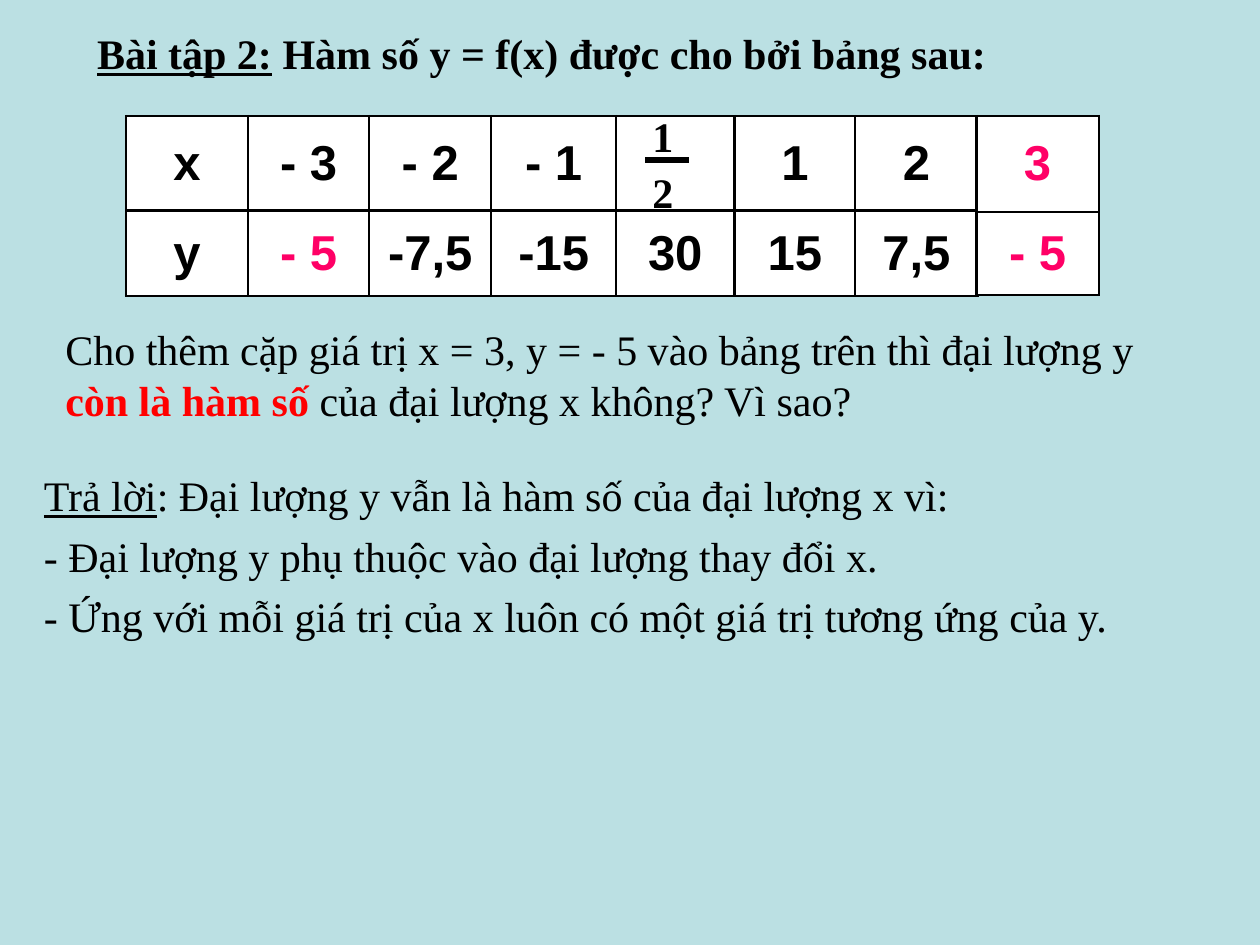
from dataclasses import dataclass

from lxml import etree
from pptx import Presentation
from pptx.dml.color import RGBColor as RGB
from pptx.enum.shapes import MSO_CONNECTOR as CONN
from pptx.enum.text import MSO_ANCHOR as ANCHOR, MSO_AUTO_SIZE as FIT, PP_ALIGN as ALIGN
from pptx.oxml import parse_xml
from pptx.oxml.ns import nsdecls, qn
from pptx.util import Inches, Pt


@dataclass
class Theme:
    bg: RGB = RGB(0xBB, 0xE0, 0xE3)
    ink: RGB = RGB(0, 0, 0)
    paper: RGB = RGB(0xFF, 0xFF, 0xFF)
    pink: RGB = RGB(0xFF, 0, 0x66)
    red: RGB = RGB(0xFF, 0, 0)
    body: Pt = Pt(24)
    cell: Pt = Pt(28)
    border: Pt = Pt(1.5)
    bar: Pt = Pt(3)
    serif: str = "Times New Roman"
    sans: str = "Arial"


T = Theme()


def add_runs(p, *runs, color=T.ink, **base):
    for text, fmt in runs:
        r = p.add_run()
        r.text = text
        values = {"name": T.serif, "size": T.body, "bold": False, **base, **fmt}
        r.font.color.rgb = values.pop("color", color)
        for key, value in values.items():
            setattr(r.font, key, value)


def add_box(shapes, left, top, width, height, wrap=True):
    tf = shapes.add_textbox(*map(Inches, (left, top, width, height))).text_frame
    tf.word_wrap = wrap
    tf.auto_size = FIT.SHAPE_TO_FIT_TEXT
    return tf


prs = Presentation()
prs.slide_width, prs.slide_height = Inches(10), Inches(7.5)
s = prs.slides.add_slide(prs.slide_layouts[5])
s.background.fill.solid()
s.background.fill.fore_color.rgb = T.bg

title = s.shapes.title
title.left, title.top, title.width, title.height = map(Inches, (0.67, 0.17, 8.42, 0.5))
tf = title.text_frame
tf.auto_size = FIT.NONE
tf.vertical_anchor = ANCHOR.TOP
p = tf.paragraphs[0]
p.alignment = ALIGN.LEFT
add_runs(p, ("Bài tập 2:", {"underline": True}),
         (" Hàm số y = f(x) được cho bởi bảng sau:", {}), bold=True)

tables = [
    (1, [0.97, 0.96, 0.97, 0.99, 0.94, 0.96, 0.97], [0.75, 0.68],
     [["x", "- 3", "- 2", "- 1", "", "1", "2"],
      ["y", "- 5", "-7,5", "-15", "30", "15", "7,5"]]),
    (7.75, [0.97], [0.76, 0.66], [["3"], ["- 5"]]),
]
for left, widths, heights, values in tables:
    table = s.shapes.add_table(
        len(heights), len(widths), Inches(left), Inches(0.92),
        Inches(sum(widths)), Inches(sum(heights))).table
    for col, width in zip(table.columns, widths):
        col.width = Inches(width)
    for row, height, texts in zip(table.rows, heights, values):
        row.height = Inches(height)
        for cell, text in zip(row.cells, texts):
            cell.fill.solid()
            cell.fill.fore_color.rgb = T.paper
            cell.vertical_anchor = ANCHOR.MIDDLE
            for i, side in enumerate("LRTB"):
                cell._tc.get_or_add_tcPr().insert(i, parse_xml(
                    f'<a:ln{side} {nsdecls("a")} w="{T.border}"><a:solidFill>'
                    f'<a:srgbClr val="{T.ink}"/></a:solidFill></a:ln{side}>'))
            if text:
                p = cell.text_frame.paragraphs[0]
                p.alignment = ALIGN.CENTER
                add_runs(p, (text, {}), name=T.sans, size=T.cell, bold=True,
                         color=T.pink if text in ("3", "- 5") else T.ink)

fraction = s.shapes.add_group_shape()
for digit, top in (("1", 0.83), ("2", 1.27)):
    tf = add_box(fraction.shapes, 5.08, top, 0.37, 0.51, wrap=False)
    add_runs(tf.paragraphs[0], (digit, {}), bold=True)
bar = fraction.shapes.add_connector(CONN.STRAIGHT, *map(Inches, (5.12, 1.27, 5.47, 1.27)))
bar.line.width = T.bar
bar.line.color.rgb = T.ink
etree.SubElement(bar._element.spPr, qn("a:effectLst"))

question = add_box(s.shapes, 0.42, 2.52, 9.17, 0.91)
add_runs(question.paragraphs[0],
         ("Cho thêm cặp giá trị x = 3, y = - 5 vào bảng trên thì đại lượng y ", {}),
         ("còn là hàm số", {"color": T.red, "bold": True}),
         (" của đại lượng x không? Vì sao?", {}))

answer = add_box(s.shapes, 0.25, 3.6, 9.75, 1.56)
lines = [
    [("Trả lời", {"underline": True}),
     (": Đại lượng y vẫn là hàm số của đại lượng x vì:", {})],
    [("- Đại lượng y phụ thuộc vào đại lượng thay đổi x.", {})],
    [("- Ứng với mỗi giá trị của x luôn có một giá trị tương ứng của y.", {})],
]
for i, runs in enumerate(lines):
    p = answer.add_paragraph() if i else answer.paragraphs[0]
    p.line_spacing = 1.2
    add_runs(p, *runs)

prs.save("out.pptx")
